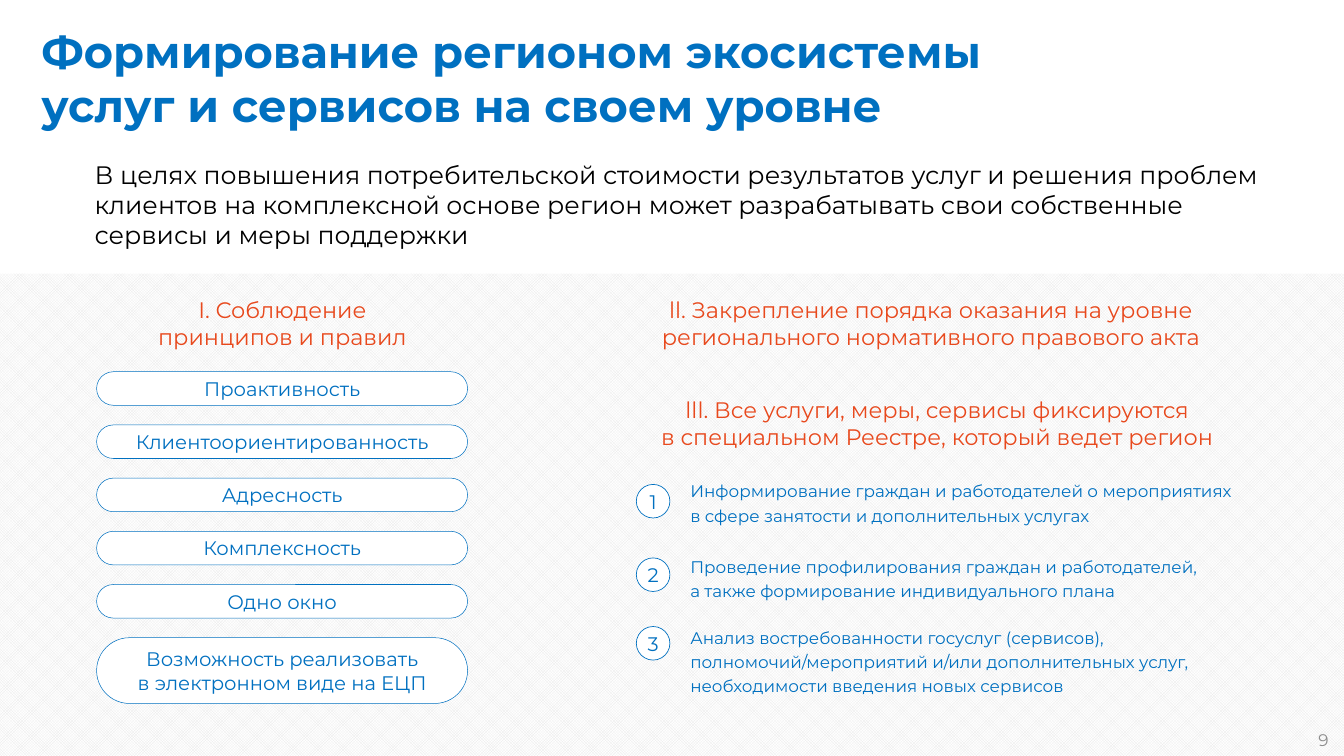
from pptx import Presentation
from pptx.dml.color import RGBColor
from pptx.enum import dml, shapes, text
from pptx.util import Pt

BLUE = RGBColor(0x00, 0x70, 0xC0)
ORANGE = RGBColor(0xE8, 0x49, 0x1D)
GRAY = RGBColor(0x8C, 0x8C, 0x8C)
HATCH = RGBColor(0xE6, 0xE6, 0xE6)
BLACK = RGBColor(0, 0, 0)
WHITE = RGBColor(0xFF, 0xFF, 0xFF)
LEFT, CENTER, RIGHT = text.PP_ALIGN.LEFT, text.PP_ALIGN.CENTER, text.PP_ALIGN.RIGHT

prs = Presentation()
prs.slide_width, prs.slide_height = Pt(1920), Pt(1080)
s = prs.slides.add_slide(prs.slide_layouts[6])


def write(sp, words, size, color, align=LEFT, bold=False, spacing=None, frame=None):
    tf = sp.text_frame
    tf.word_wrap = True
    for name, value in (frame or {}).items():
        setattr(tf, name, value)
    p = tf.paragraphs[0]
    p.text = words
    p.alignment = align
    p.line_spacing = spacing
    for r in p.runs:
        for name, value in {"name": "Montserrat", "size": Pt(size), "bold": bold}.items():
            setattr(r.font, name, value)
        r.font.color.rgb = color


def outlined(kind, x, y, w, h, line_width, words, margin):
    sp = s.shapes.add_shape(kind, Pt(x), Pt(y), Pt(w), Pt(h))
    sp.shadow.inherit = False
    sp.fill.solid()
    sp.fill.fore_color.rgb = WHITE
    sp.line.color.rgb = BLUE
    sp.line.width = Pt(line_width)
    write(sp, words, 28, BLUE, CENTER, frame={
        "vertical_anchor": text.MSO_ANCHOR.MIDDLE,
        "margin_left": Pt(margin), "margin_right": Pt(margin),
        "margin_top": 0, "margin_bottom": 0})
    return sp


# Patterned lower band
sp = s.shapes.add_shape(shapes.MSO_SHAPE.RECTANGLE, 0, Pt(391), Pt(1920), Pt(689))
sp.shadow.inherit = False
sp.line.fill.background()
sp.fill.patterned()
sp.fill.pattern = dml.MSO_PATTERN.OUTLINED_DIAMOND
sp.fill.fore_color.rgb = HATCH
sp.fill.back_color.rgb = WHITE

# Title, introduction, section headings and page number
blocks = [
    (52, 30, 1744, 163, "Формирование регионом экосистемы\nуслуг и сервисов на своем уровне",
     {"size": 64, "color": BLUE, "bold": True}),
    (128, 224, 1680, 138,
     "В целях повышения потребительской стоимости результатов услуг и решения проблем "
     "клиентов на комплексной основе регион может разрабатывать свои собственные "
     "сервисы и меры поддержки", {"size": 36, "color": BLACK}),
    (180, 420, 447, 85, "I. Соблюдение принципов и правил",
     {"size": 32, "color": ORANGE, "align": CENTER}),
    (850, 420, 960, 85,
     "ll. Закрепление порядка оказания на уровне регионального нормативного правового акта",
     {"size": 32, "color": ORANGE, "align": CENTER}),
    (850, 562, 978, 85,
     "lll. Все услуги, меры, сервисы фиксируются\nв специальном Реестре, который ведет регион",
     {"size": 32, "color": ORANGE, "align": CENTER}),
    (1473, 1039, 432, 37, "9",
     {"size": 24, "color": GRAY, "align": RIGHT,
      "frame": {"vertical_anchor": text.MSO_ANCHOR.MIDDLE}}),
]
for x, y, w, h, words, fmt in blocks:
    write(s.shapes.add_textbox(Pt(x), Pt(y), Pt(w), Pt(h)), words, **fmt)

# Principles in pills, the last one two lines high
principles = ["Проактивность", "Клиентоориентированность", "Адресность", "Комплексность",
              "Одно окно", "Возможность реализовать\nв электронном виде на ЕЦП"]
for i, words in enumerate(principles):
    height = 94 if "\n" in words else 48
    sp = outlined(shapes.MSO_SHAPE.ROUNDED_RECTANGLE, 138, 531 + 76 * i, 530, height,
                  0.75, words, 6)
    sp.adjustments[0] = 0.5

# Numbered register items: circle top, text top, text height
items = [
    (692, 678, 77, "Информирование граждан и работодателей о мероприятиях\n"
                   "в сфере занятости и дополнительных услугах"),
    (797, 786, 77, "Проведение профилирования граждан и работодателей,\n"
                   "а также формирование индивидуального плана"),
    (895, 887, 112, "Анализ востребованности госуслуг (сервисов), полномочий/мероприятий "
                    "и/или дополнительных услуг, необходимости введения новых сервисов"),
]
for number, (circle_y, y, h, words) in enumerate(items, 1):
    outlined(shapes.MSO_SHAPE.OVAL, 909, circle_y, 48, 48, 1, str(number), 0)
    write(s.shapes.add_textbox(Pt(979), Pt(y), Pt(830), Pt(h)), words, 24, BLUE, spacing=1.2)

prs.save("out.pptx")
